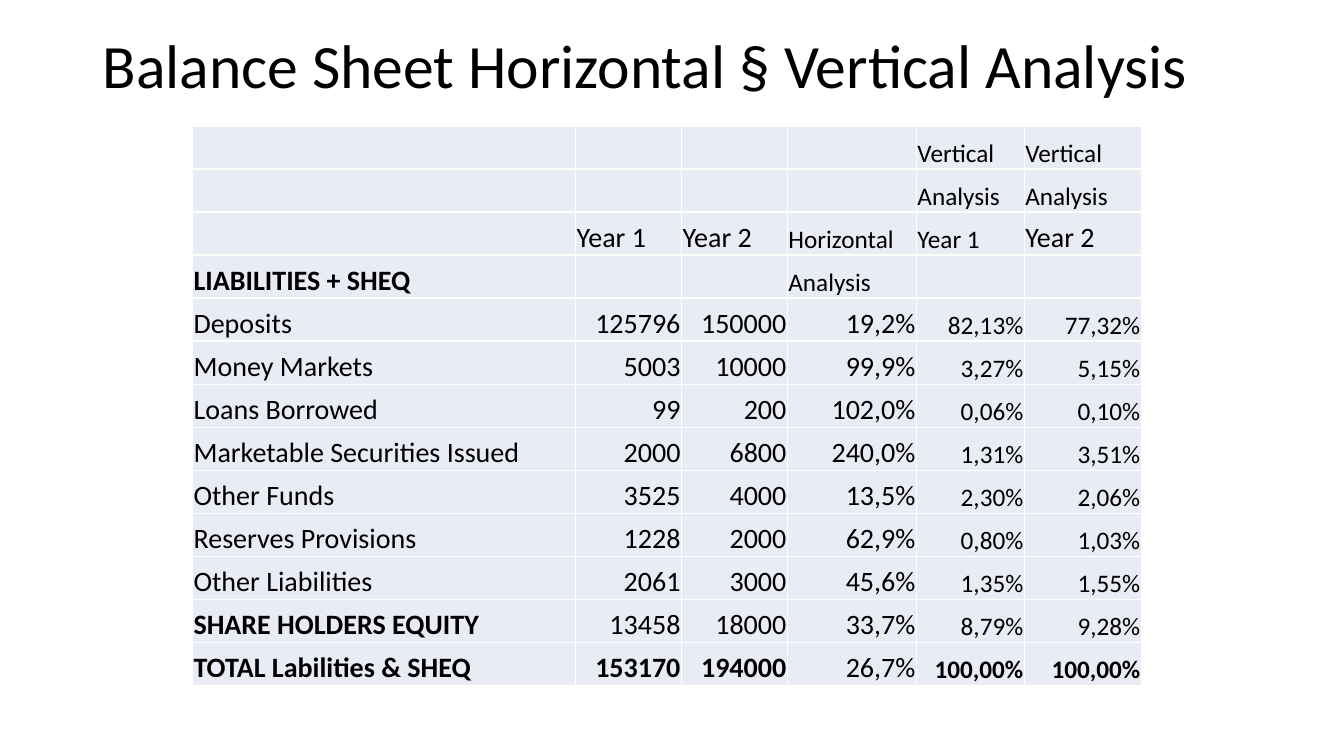
from pptx import Presentation
from pptx.dml.color import RGBColor
from pptx.enum.text import MSO_ANCHOR, PP_ALIGN
from pptx.oxml import parse_xml
from pptx.oxml.ns import nsdecls
from pptx.util import Inches, Pt

TOP, BOTTOM = MSO_ANCHOR.TOP, MSO_ANCHOR.BOTTOM
LEFT, RIGHT = PP_ALIGN.LEFT, PP_ALIGN.RIGHT

FONT = "Calibri"
BLACK, WHITE, CELL_FILL = "000000", "FFFFFF", "E9EBF5"

COL_WIDTHS = [3.8, 1.05, 1.05, 1.28, 1.07, 1.16]
HEADER_ROWS = [
    ["", "", "", "", "Vertical", "Vertical"],
    ["", "", "", "", "Analysis", "Analysis"],
    ["", "Year 1", "Year 2", "Horizontal", "Year 1", "Year 2"],
    ["LIABILITIES + SHEQ", "", "", "Analysis", "", ""],
]
BODY_ROWS = [
    ["Deposits", "125796", "150000", "19,2%", "82,13%", "77,32%"],
    ["Money Markets", "5003", "10000", "99,9%", "3,27%", "5,15%"],
    ["Loans Borrowed", "99", "200", "102,0%", "0,06%", "0,10%"],
    ["Marketable Securities Issued", "2000", "6800", "240,0%", "1,31%", "3,51%"],
    ["Other Funds", "3525", "4000", "13,5%", "2,30%", "2,06%"],
    ["Reserves Provisions", "1228", "2000", "62,9%", "0,80%", "1,03%"],
    ["Other Liabilities", "2061", "3000", "45,6%", "1,35%", "1,55%"],
    ["SHARE HOLDERS EQUITY", "13458", "18000", "33,7%", "8,79%", "9,28%"],
    ["TOTAL Labilities & SHEQ", "153170", "194000", "26,7%", "100,00%", "100,00%"],
]
ROWS = HEADER_ROWS + BODY_ROWS
BOLD_LABELS = {"LIABILITIES + SHEQ", "SHARE HOLDERS EQUITY", "TOTAL Labilities & SHEQ"}
HORIZONTAL_COL = 3
YEAR_ROW = 2


def color(value):
    return RGBColor.from_string(value)


def write(p, text, size, align=LEFT, bold=False):
    p.text = text
    p.alignment = align
    p.font.name = FONT
    p.font.size = Pt(size)
    p.font.bold = bold
    p.font.color.rgb = color(BLACK)


def set_borders(cell, line_color, width):
    # Border elements come before the fill in the cell properties
    tcPr = cell._tc.get_or_add_tcPr()
    for i, side in enumerate(("lnL", "lnR", "lnT", "lnB")):
        tcPr.insert(i, parse_xml(
            f'<a:{side} {nsdecls("a")} w="{Pt(width)}"><a:solidFill>'
            f'<a:srgbClr val="{line_color}"/></a:solidFill></a:{side}>'))


def cell_size(row, col):
    if col < HORIZONTAL_COL or (row, col) == (YEAR_ROW, 5):
        return 20
    return 20 if col == HORIZONTAL_COL and row >= len(HEADER_ROWS) else 18


def cell_bold(row, col):
    if col == 0:
        return ROWS[row][0] in BOLD_LABELS
    return row == len(ROWS) - 1 and col != HORIZONTAL_COL


def add_title(slide, left, top, width, height):
    box = slide.shapes.add_textbox(Inches(left), Inches(top), Inches(width), Inches(height))
    tf = box.text_frame
    tf.word_wrap = True
    tf.vertical_anchor = TOP
    tf.margin_top = Inches(0.15)
    p = tf.paragraphs[0]
    write(p, "Balance Sheet Horizontal § Vertical Analysis", 44)
    p.line_spacing = 0.9


def add_balance_table(slide, left, top, row_height):
    frame = slide.shapes.add_table(
        len(ROWS), len(COL_WIDTHS), Inches(left), Inches(top),
        Inches(sum(COL_WIDTHS)), Inches(row_height * len(ROWS)))
    table = frame.table
    for column, width in zip(table.columns, COL_WIDTHS):
        column.width = Inches(width)
    for r, values in enumerate(ROWS):
        table.rows[r].height = Inches(row_height)
        for c, value in enumerate(values):
            cell = table.cell(r, c)
            cell.fill.solid()
            cell.fill.fore_color.rgb = color(CELL_FILL)
            set_borders(cell, WHITE, 1)
            cell.vertical_anchor = BOTTOM
            cell.margin_left = cell.margin_right = cell.margin_top = Inches(0.01)
            cell.margin_bottom = 0
            is_number = r >= len(HEADER_ROWS) and c > 0
            write(cell.text_frame.paragraphs[0], value, cell_size(r, c),
                  RIGHT if is_number else LEFT, cell_bold(r, c))


def main():
    prs = Presentation()
    prs.slide_width, prs.slide_height = Inches(13.33), Inches(7.5)
    slide = prs.slides.add_slide(prs.slide_layouts[6])
    add_title(slide, 0.92, 0.2, 11.5, 1.65)
    add_balance_table(slide, 1.91, 1.25, 0.427)
    prs.save("out.pptx")


if __name__ == "__main__":
    main()
